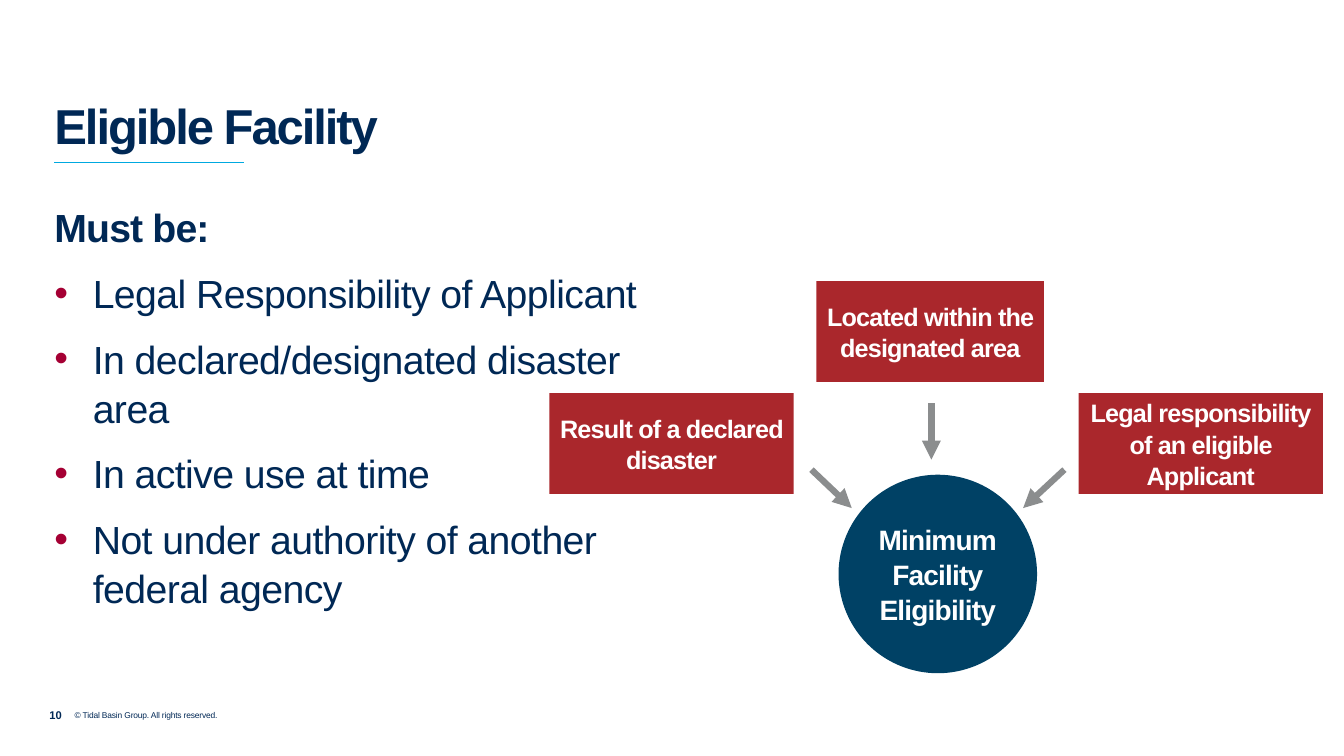
import pptx
import pptx.util
import pptx.dml.color
import pptx.enum.shapes
import pptx.enum.text
import pptx.oxml
import pptx.oxml.ns

Pt = pptx.util.Pt
SHAPES = pptx.enum.shapes.MSO_SHAPE
ALIGN = pptx.enum.text.PP_ALIGN
ANCHOR = pptx.enum.text.MSO_ANCHOR

# Content
TITLE = "Eligible Facility"
LEAD = "Must be:"
REQUIREMENTS = [
    "Legal Responsibility of Applicant",
    "In declared/designated disaster area",
    "In active use at time",
    "Not under authority of another federal agency",
]
OUTCOME = ["Minimum", "Facility", "Eligibility"]
# text, (left, top, width, height)
CRITERIA = [
    ("Result of a declared disaster", (392.4, 280.8, 174.5, 72)),
    ("Located within the designated area", (583.2, 200.9, 162.5, 72)),
    ("Legal responsibility of an eligible Applicant", (770.4, 280.8, 174.5, 72)),
]
# (start x, start y, end x, end y)
ARROWS = [
    (665.3, 288, 665.3, 328.3),
    (579.6, 335.5, 608.4, 362.9),
    (760.3, 335.5, 730.8, 362.9),
]
PAGE_NUMBER = "10"
COPYRIGHT = "© Tidal Basin Group. All rights reserved."

THEME = {
    "font": "Arial",
    "navy": "002855", "circle": "004165", "red": "AA272C", "bullet": "A50034",
    "grey": "8B8D8E", "rule": "00A9E0", "white": "FFFFFF",
    "title": 35, "body": 28, "outcome": 20, "criterion": 18, "number": 8, "copyright": 6,
    "line_spacing": 1.04,
}
MARGIN = 38.9
BULLET_INDENT = 27.4


def rgb(name):
    return pptx.dml.color.RGBColor.from_string(THEME[name])


def add_xml(parent, tag, **attributes):
    child = pptx.oxml.parse_xml(f"<a:{tag} {pptx.oxml.ns.nsdecls('a')}/>")
    for key, value in attributes.items():
        child.set(key, value)
    parent.append(child)
    return child


def write(paragraph, text, size, color, bold=False, tracking=0.0, **layout):
    """Fill a paragraph with one run; tracking is in points."""
    for key, value in {"line_spacing": THEME["line_spacing"], **layout}.items():
        setattr(paragraph, key, value)
    run = paragraph.add_run()
    run.text = text
    formats = {"name": THEME["font"], "size": Pt(THEME[size]), "bold": bold}
    for key, value in formats.items():
        setattr(run.font, key, value)
    run.font.color.rgb = rgb(color)
    if tracking:
        run._r.get_or_add_rPr().set("spc", str(round(tracking * 100)))


def add_bullet(paragraph):
    properties = paragraph._p.get_or_add_pPr()
    indent = Pt(BULLET_INDENT)
    properties.set("marL", str(indent))
    properties.set("indent", str(-indent))
    add_xml(add_xml(properties, "buClr"), "srgbClr", val=THEME["bullet"])
    add_xml(properties, "buFont", typeface=THEME["font"])
    add_xml(properties, "buChar", char="•")


def add_text_frame(slide, box):
    frame = slide.shapes.add_textbox(*map(Pt, box)).text_frame
    frame.word_wrap = True
    for side in ("left", "top", "right", "bottom"):
        setattr(frame, f"margin_{side}", 0)
    return frame


def add_filled_shape(slide, kind, box, fill, lines, size):
    shape = slide.shapes.add_shape(kind, *map(Pt, box))
    shape.shadow.inherit = False
    shape.fill.solid()
    shape.fill.fore_color.rgb = rgb(fill)
    shape.line.fill.background()
    frame = shape.text_frame
    frame.word_wrap = True
    frame.vertical_anchor = ANCHOR.MIDDLE
    for i, line in enumerate(lines):
        paragraph = frame.add_paragraph() if i else frame.paragraphs[0]
        write(paragraph, line, size, "white", True, -0.6, alignment=ALIGN.CENTER)


def add_line(slide, ends, color, width, arrow=False):
    line = slide.shapes.add_connector(
        pptx.enum.shapes.MSO_CONNECTOR.STRAIGHT, *map(Pt, ends))
    line.line.color.rgb = rgb(color)
    line.line.width = Pt(width)
    if arrow:
        add_xml(line.line._get_or_add_ln(), "tailEnd", type="triangle")
    add_xml(line._element.spPr, "effectLst")


def main():
    deck = pptx.Presentation()
    deck.slide_width, deck.slide_height = Pt(960), Pt(540)
    slide = deck.slides.add_slide(deck.slide_layouts[6])

    add_line(slide, (MARGIN, 115.9, 174.2, 115.9), "rule", 0.75)
    number = add_text_frame(slide, (35.3, 505.4, 17, 20))
    write(number.paragraphs[0], PAGE_NUMBER, "number", "navy", True)
    copyright_line = add_text_frame(slide, (53.3, 506.9, 200.2, 20))
    write(copyright_line.paragraphs[0], COPYRIGHT, "copyright", "navy", tracking=-0.1)
    title = add_text_frame(slide, (MARGIN, 66.2, 741.6, 43.9))
    write(title.paragraphs[0], TITLE, "title", "navy", True, -1.5)

    body = add_text_frame(slide, (MARGIN, 144, 444.2, 209.5))
    write(body.paragraphs[0], LEAD, "body", "navy", True, -0.6, space_after=Pt(12))
    for requirement in REQUIREMENTS:
        paragraph = body.add_paragraph()
        paragraph.line_spacing = THEME["line_spacing"]
        paragraph.space_after = Pt(12)
        add_bullet(paragraph)
        write(paragraph, requirement, "body", "navy", tracking=-0.4)

    add_filled_shape(slide, SHAPES.OVAL, (599, 339.1, 141.8, 141.8),
                     "circle", OUTCOME, "outcome")
    for ends in ARROWS:
        add_line(slide, ends, "grey", 4.5, arrow=True)
    for text, box in CRITERIA:
        add_filled_shape(slide, SHAPES.RECTANGLE, box, "red", [text], "criterion")

    deck.save("out.pptx")


if __name__ == "__main__":
    main()
